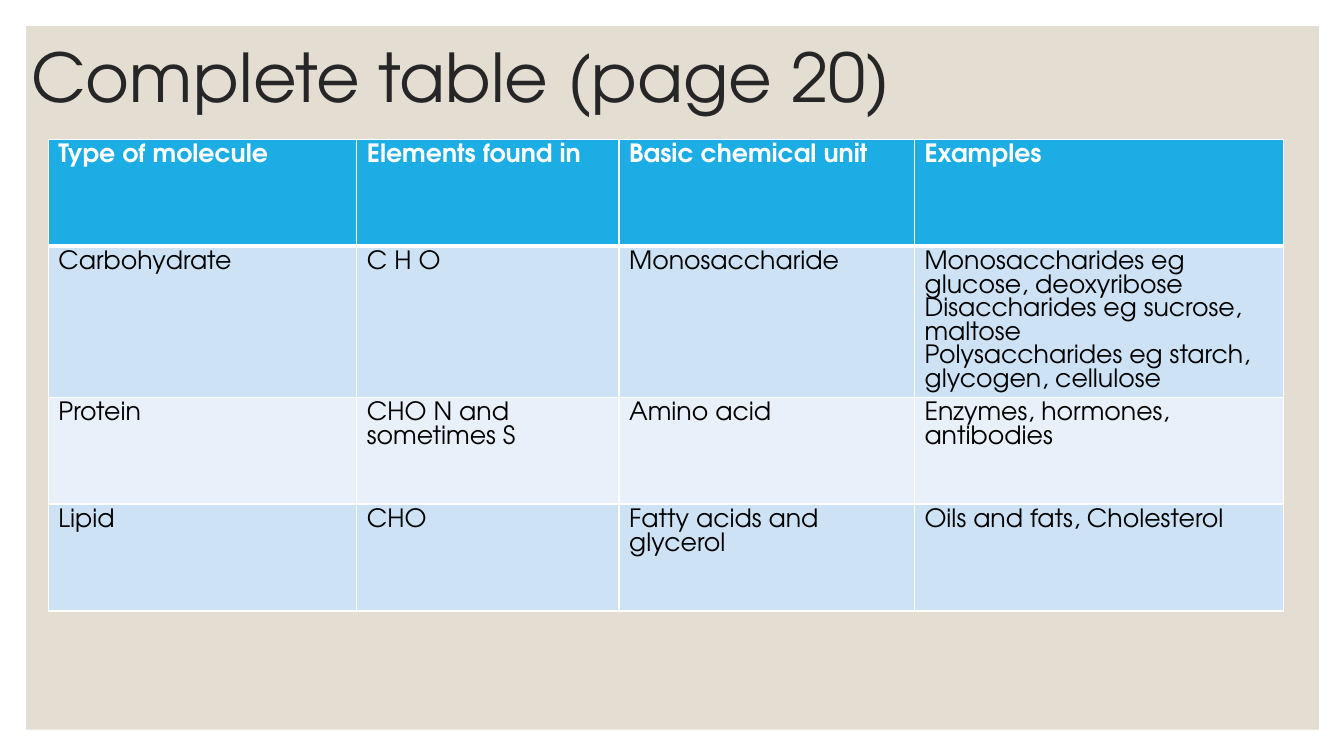
import dataclasses

import lxml.etree
import pptx
import pptx.dml.color
import pptx.enum.shapes
import pptx.enum.text
import pptx.oxml.ns
import pptx.util

Inches = pptx.util.Inches


@dataclasses.dataclass(frozen=True)
class Theme:
    """Colours, font and type sizes of the slide."""
    font: str = "TeX Gyre Adventor"
    title_size: int = 48
    cell_size: int = 18
    panel: str = "E3DED1"
    title: str = "262626"
    header: str = "1CADE4"
    bands: tuple = ("CDE3F5", "E8F1FA")
    body: str = "000000"
    white: str = "FFFFFF"


THEME = Theme()

COLUMN_WIDTHS = (3.06, 2.6, 2.93, 3.66)
ROW_HEIGHT = 1.06
MOLECULES = (
    ("Type of molecule", "Elements found in", "Basic chemical unit", "Examples"),
    ("Carbohydrate", "C H O", "Monosaccharide",
     "Monosaccharides eg glucose, deoxyribose\n"
     "Disaccharides eg sucrose, maltose\n"
     "Polysaccharides eg starch, glycogen, cellulose"),
    ("Protein", "CHO N and sometimes S", "Amino acid",
     "Enzymes, hormones, antibodies"),
    ("Lipid", "CHO", "Fatty acids and glycerol", "Oils and fats, Cholesterol"),
)


def rgb(value):
    """Return the colour for a hex string."""
    return pptx.dml.color.RGBColor.from_string(value)


def add_run(p, text, size, color, bold=False):
    """Add one formatted run to a paragraph."""
    r = p.add_run()
    r.text = text
    r.font.name = THEME.font
    r.font.size = pptx.util.Pt(size)
    r.font.bold = bold
    r.font.color.rgb = rgb(color)


def set_title(s, text):
    """Place and format the title placeholder."""
    sp = s.shapes.title
    sp.left, sp.top = Inches(0.21), Inches(0.05)
    sp.width, sp.height = Inches(11), Inches(1.5)
    tf = sp.text_frame
    tf.word_wrap = True
    tf.vertical_anchor = pptx.enum.text.MSO_ANCHOR.MIDDLE
    p = tf.paragraphs[0]
    p.alignment = pptx.enum.text.PP_ALIGN.LEFT
    p.line_spacing = 0.9
    add_run(p, text, THEME.title_size, THEME.title)


def add_panel(s):
    """Add the background panel behind the title."""
    sp = s.shapes.add_shape(pptx.enum.shapes.MSO_SHAPE.RECTANGLE, Inches(0.26),
                            Inches(0.26), Inches(12.82), Inches(6.98))
    sp.shadow.inherit = False
    sp.fill.solid()
    sp.fill.fore_color.rgb = rgb(THEME.panel)
    sp.line.fill.background()
    s.shapes.title.element.addprevious(sp.element)


def set_border(cell, side, width):
    """Draw one white cell border of a width in points."""
    qn = pptx.oxml.ns.qn
    ln = lxml.etree.SubElement(cell._tc.get_or_add_tcPr(), qn(f"a:ln{side}"),
                               w=str(pptx.util.Pt(width)))
    fill = lxml.etree.SubElement(ln, qn("a:solidFill"))
    lxml.etree.SubElement(fill, qn("a:srgbClr"), val=THEME.white)


def fill_cell(cell, text, row):
    """Write and format one cell according to its row."""
    header = row == 0
    for side in "LRTB":
        thick = (header and side == "B") or (row == 1 and side == "T")
        set_border(cell, side, 3 if thick else 1)
    cell.fill.solid()
    cell.fill.fore_color.rgb = rgb(
        THEME.header if header else THEME.bands[(row - 1) % 2])
    tf = cell.text_frame
    for i, line in enumerate(text.split("\n")):
        p = tf.add_paragraph() if i else tf.paragraphs[0]
        add_run(p, line, THEME.cell_size,
                THEME.white if header else THEME.body, header)


def add_molecule_table(s):
    """Add the table of biological molecules."""
    table = s.shapes.add_table(
        len(MOLECULES), len(COLUMN_WIDTHS), Inches(0.48), Inches(1.38),
        Inches(sum(COLUMN_WIDTHS)), Inches(ROW_HEIGHT * len(MOLECULES))).table
    for column, width in zip(table.columns, COLUMN_WIDTHS):
        column.width = Inches(width)
    for i, values in enumerate(MOLECULES):
        table.rows[i].height = Inches(ROW_HEIGHT)
        for j, text in enumerate(values):
            fill_cell(table.cell(i, j), text, i)


def main():
    """Build and save the slide."""
    prs = pptx.Presentation()
    prs.slide_width, prs.slide_height = Inches(13.33), Inches(7.5)
    s = prs.slides.add_slide(prs.slide_layouts[5])
    add_panel(s)
    set_title(s, "Complete table (page 20)")
    add_molecule_table(s)
    prs.save("out.pptx")


if __name__ == "__main__":
    main()
